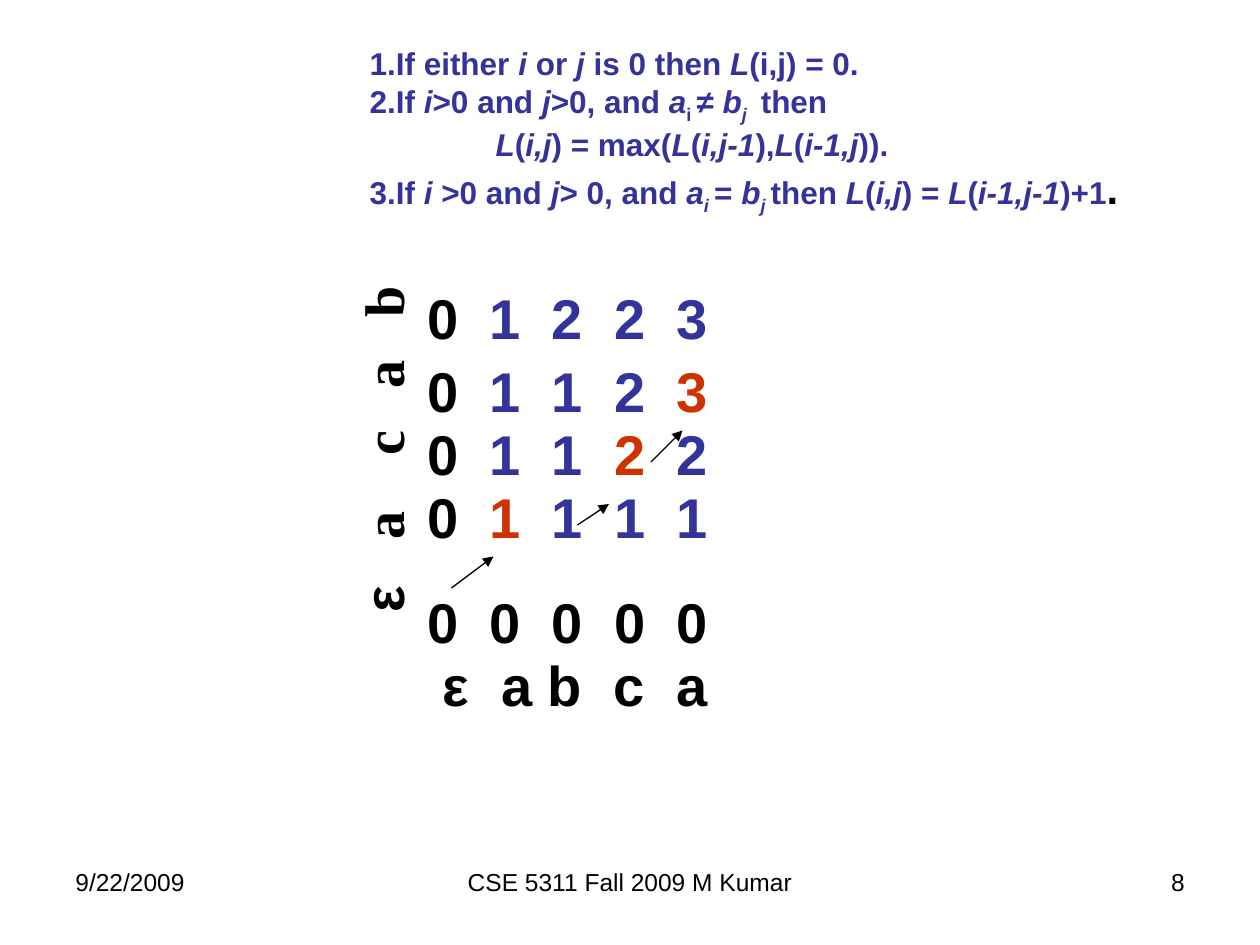
from dataclasses import dataclass

from lxml import etree
from pptx import Presentation
from pptx.dml.color import RGBColor
from pptx.enum.shapes import MSO_CONNECTOR, MSO_SHAPE
from pptx.enum.text import MSO_ANCHOR, PP_ALIGN
from pptx.oxml.ns import qn
from pptx.util import Inches, Pt

LEFT, CENTER, RIGHT = PP_ALIGN.LEFT, PP_ALIGN.CENTER, PP_ALIGN.RIGHT
TOP, MIDDLE = MSO_ANCHOR.TOP, MSO_ANCHOR.MIDDLE
STRAIGHT, RECTANGLE = MSO_CONNECTOR.STRAIGHT, MSO_SHAPE.RECTANGLE


@dataclass(frozen=True)
class Theme:
    sans: str = "Arial"
    serif: str = "Times New Roman"
    ink: str = "000000"
    blue: str = "333399"
    accent: str = "CC3300"
    paper: str = "FFFFFF"
    footer_size: int = 14
    rule_size: int = 18
    stop_size: int = 24
    table_size: int = 32
    line_width: float = 0.75


THEME = Theme()

# The slide is a grid of 120 columns by 90 rows, each 1/12 inch
SLIDE_WIDTH, SLIDE_HEIGHT = 10, 7.5
COLUMNS = 120
CELL_PITCH = 0.494  # inches between matrix columns
LINE_HEIGHT = 7.5   # grid rows in one line of the matrix

# Parts between bars alternate roman and italic; a leading _ lowers a part
RULES = [
    ("1.If either |i| or |j| is 0 then |L|(i,j) = 0.", 0),
    ("2.If |i|>0 and |j|>0, and |a|_i ||≠ |b||_j | then", 0),
    ("|L|(|i,j|) = max(|L|(|i,j-1|),|L|(|i-1,j|)).", 1),
    ("3.If |i| >0 and |j|> 0, and |a||_i |= |b||_j |then "
     "|L|(|i,j|) = |L|(|i-1,j-1|)+1", 0),
]

# Grid row, cell values, column that lies on the traced path
MATRIX = [
    (27, "01223", None),
    (34, "01123", 4),
    (40, "01122", 3),
    (46, "01111", 1),
    (56, "00000", None),
]

ARROWS = [(43, 56, 47, 53), (55, 50, 58, 48), (62, 44, 65, 41)]

FOOTERS = [
    (6, 28, "9/22/2009", LEFT),
    (41, 38, "CSE 5311 Fall 2009 M Kumar", CENTER),
    (86, 28, "8", RIGHT),
]


def grid(*units):
    return [Inches(unit * SLIDE_WIDTH / COLUMNS) for unit in units]


def add_span(para, text, size, color, font=THEME.sans, bold=True, italic=False):
    span = para.add_run()
    span.text = text
    span.font.size = Pt(size)
    span.font.name = font
    span.font.bold = bold
    span.font.italic = italic
    span.font.color.rgb = RGBColor.from_string(color)
    return span


def set_tabs(para, stops):
    tabs = etree.SubElement(para._p.get_or_add_pPr(), qn("a:tabLst"))
    for stop in stops:
        etree.SubElement(tabs, qn("a:tab"), pos=str(Inches(stop)), algn="l")


def add_tabbed_line(page, place, stops, cells):
    """One line of letters or digits; each cell is (text, color, font)."""
    box = page.shapes.add_textbox(*grid(*place))
    frame = box.text_frame
    frame.word_wrap = True
    frame.vertical_anchor = TOP
    frame.margin_left = frame.margin_right = 0
    frame.margin_top = frame.margin_bottom = 0
    para = frame.paragraphs[0]
    set_tabs(para, stops)
    for index, (text, color, font) in enumerate(cells):
        lead = "\t" if index else ""
        add_span(para, lead + text, THEME.table_size, color, font)
    return box


def add_matrix_row(page, row, values, path_column):
    cells = []
    for column, value in enumerate(values):
        color = THEME.ink if value == "0" else THEME.blue
        if column == path_column:
            color = THEME.accent
        cells.append((value, color, THEME.sans))
    stops = [CELL_PITCH * column for column in range(1, len(values))]
    add_tabbed_line(page, (40.7, row, 31, LINE_HEIGHT), stops, cells)


def add_axes(page):
    # Letters below the matrix
    across = [(letter, THEME.ink, THEME.sans) for letter in "εabca"]
    add_tabbed_line(page, (42.1, 62, 28, LINE_HEIGHT),
                    [0.47, 0.84, 1.36, 1.86], across)
    # Letters beside the matrix, read upwards
    upward = [(letter, THEME.ink, THEME.sans if letter == "ε" else THEME.serif)
              for letter in "εacab"]
    box = add_tabbed_line(page, (20.7, 38.4, 32.4, LINE_HEIGHT),
                          [0.58, 1.25, 1.78, 2.34], upward)
    box.rotation = 270


def add_rules(page):
    box = page.shapes.add_shape(RECTANGLE, *grid(22, 4, 86, 16.8))
    box.shadow.inherit = False
    box.fill.solid()
    box.fill.fore_color.rgb = RGBColor.from_string(THEME.paper)
    box.line.fill.background()
    frame = box.text_frame
    frame.word_wrap = True
    frame.vertical_anchor = MIDDLE
    frame.margin_left, frame.margin_right = Inches(1.1), 0
    for number, (rule, indent) in enumerate(RULES):
        para = frame.add_paragraph() if number else frame.paragraphs[0]
        para.alignment = LEFT
        para._p.get_or_add_pPr().set("marL", str(Inches(indent)))
        for index, part in enumerate(rule.split("|")):
            if part:
                span = add_span(para, part.lstrip("_"), THEME.rule_size,
                                THEME.blue, italic=index % 2 == 1)
                if part.startswith("_"):
                    span.font._element.set("baseline", "-25000")
    add_span(para, ".", THEME.stop_size, THEME.ink)


def add_arrow(page, ends):
    arrow = page.shapes.add_connector(STRAIGHT, *grid(*ends))
    arrow.line.color.rgb = RGBColor.from_string(THEME.ink)
    arrow.line.width = Pt(THEME.line_width)
    etree.SubElement(arrow.line._get_or_add_ln(), qn("a:tailEnd"), type="triangle")
    etree.SubElement(arrow._element.spPr, qn("a:effectLst"))


def add_footer(page, left, width, text, alignment):
    box = page.shapes.add_textbox(*grid(left, 82, width, 6.2))
    box.text_frame.word_wrap = True
    para = box.text_frame.paragraphs[0]
    para.alignment = alignment
    add_span(para, text, THEME.footer_size, THEME.ink, bold=False)


def main():
    deck = Presentation()
    deck.slide_width = Inches(SLIDE_WIDTH)
    deck.slide_height = Inches(SLIDE_HEIGHT)
    page = deck.slides.add_slide(deck.slide_layouts[6])

    for footer in FOOTERS:
        add_footer(page, *footer)
    add_axes(page)
    add_rules(page)
    for line in MATRIX:
        add_matrix_row(page, *line)
    for ends in ARROWS:
        add_arrow(page, ends)

    deck.save("out.pptx")


if __name__ == "__main__":
    main()
